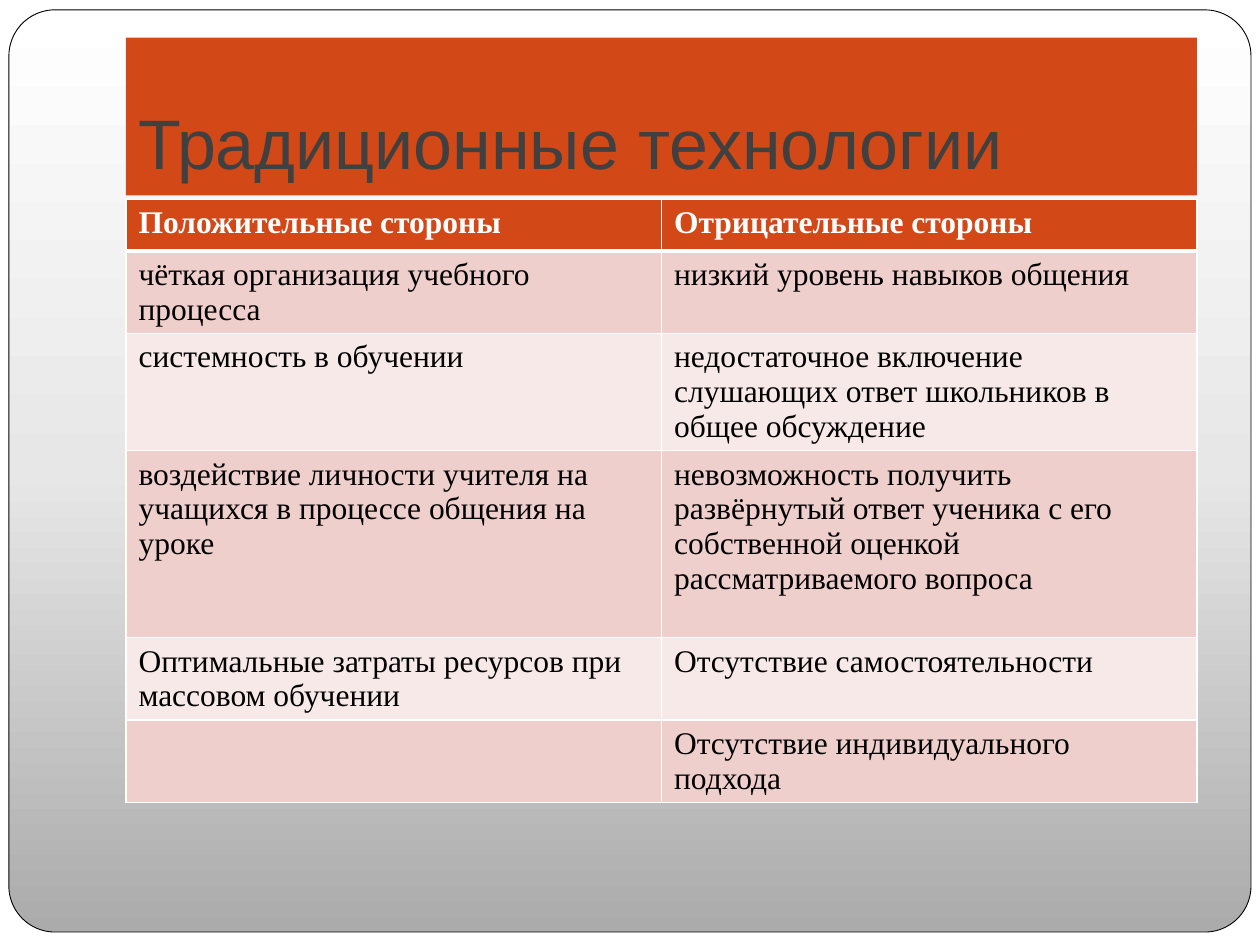
"""Build the slide comparing strengths and weaknesses of traditional teaching."""
from pptx import Presentation
from pptx.dml.color import RGBColor as RGB
from pptx.enum.shapes import MSO_SHAPE as SHAPE
from pptx.enum.text import MSO_ANCHOR as ANCHOR, PP_ALIGN as ALIGN
from pptx.oxml import parse_xml
from pptx.oxml.ns import nsdecls
from pptx.util import Cm, Pt

COLORS = {
    "accent": "D34817", "title": "404040", "white": "FFFFFF", "black": "000000",
    "odd": "EFCFCC", "even": "F7E9E8", "low": "ABABAB", "middle": "E7E7E7",
}
ROWS = [
    (1.04, "Положительные стороны", "Отрицательные стороны"),
    (1.65, "чёткая организация учебного процесса", "низкий уровень навыков общения"),
    (2.36, "системность в обучении",
     "недостаточное включение слушающих ответ школьников в общее обсуждение"),
    (3.77, "воздействие личности учителя на учащихся в процессе общения на уроке",
     "невозможность получить развёрнутый ответ ученика с его собственной оценкой "
     "рассматриваемого вопроса"),
    (1.65, "Оптимальные затраты ресурсов при массовом обучении",
     "Отсутствие самостоятельности"),
    (1.65, "", "Отсутствие индивидуального подхода"),
]


def color(name):
    return RGB.from_string(COLORS[name])


def add_border(cell, side, width):
    cell._tc.get_or_add_tcPr().append(parse_xml(
        f'<a:ln{side} {nsdecls("a")} w="{Pt(width)}"><a:solidFill>'
        f'<a:srgbClr val="{COLORS["white"]}"/></a:solidFill></a:ln{side}>'))


prs = Presentation()
prs.slide_width, prs.slide_height = Cm(25.4), Cm(19.05)
slide = prs.slides.add_slide(prs.slide_layouts[6])
slide.background.fill.solid()
slide.background.fill.fore_color.rgb = color("white")

panel = slide.shapes.add_shape(
    SHAPE.ROUNDED_RECTANGLE, Cm(0.18), Cm(0.2), Cm(25.04), Cm(18.59))
panel.adjustments[0] = 0.05
panel.shadow.inherit = False
panel.line.color.rgb = color("black")
panel.line.width = Pt(0.5)
stops = "".join(
    f'<a:gs pos="{position}"><a:srgbClr val="{COLORS[name]}"/></a:gs>'
    for position, name in ((0, "low"), (50000, "middle"), (100000, "white")))
panel._element.spPr.insert(2, parse_xml(
    f'<a:gradFill {nsdecls("a")} rotWithShape="1"><a:gsLst>{stops}</a:gsLst>'
    '<a:lin ang="16200000" scaled="0"/></a:gradFill>'))

title = slide.shapes.add_shape(
    SHAPE.RECTANGLE, Cm(2.54), Cm(0.76), Cm(21.59), Cm(3.18))
title.shadow.inherit = False
title.fill.solid()
title.fill.fore_color.rgb = color("accent")
title.line.fill.background()
heading = title.text_frame
heading.word_wrap = True
heading.vertical_anchor = ANCHOR.BOTTOM
heading.margin_bottom = Cm(0.25)
heading.text = "Традиционные технологии"
paragraph = heading.paragraphs[0]
paragraph.alignment = ALIGN.LEFT
paragraph.font.name = "Arial"
paragraph.font.size = Pt(40)
paragraph.font.color.rgb = color("title")

comparison = slide.shapes.add_table(
    len(ROWS), 2, Cm(2.54), Cm(4.02), Cm(21.59),
    Cm(sum(row[0] for row in ROWS))).table
for r, (height, *sides) in enumerate(ROWS):
    comparison.rows[r].height = Cm(height)
    header = r == 0
    band = "accent" if header else "odd" if r % 2 else "even"
    for c, wording in enumerate(sides):
        cell = comparison.cell(r, c)
        cell.text = wording
        paragraph = cell.text_frame.paragraphs[0]
        paragraph.font.name = "Times New Roman"
        paragraph.font.size = Pt(18)
        paragraph.font.bold = header
        paragraph.font.color.rgb = color("white" if header else "black")
        for side, width in (("L", 1), ("R", 1), ("T", 3 if r == 1 else 1),
                            ("B", 3 if header else 1)):
            add_border(cell, side, width)
        cell.fill.solid()
        cell.fill.fore_color.rgb = color(band)

prs.save("out.pptx")
